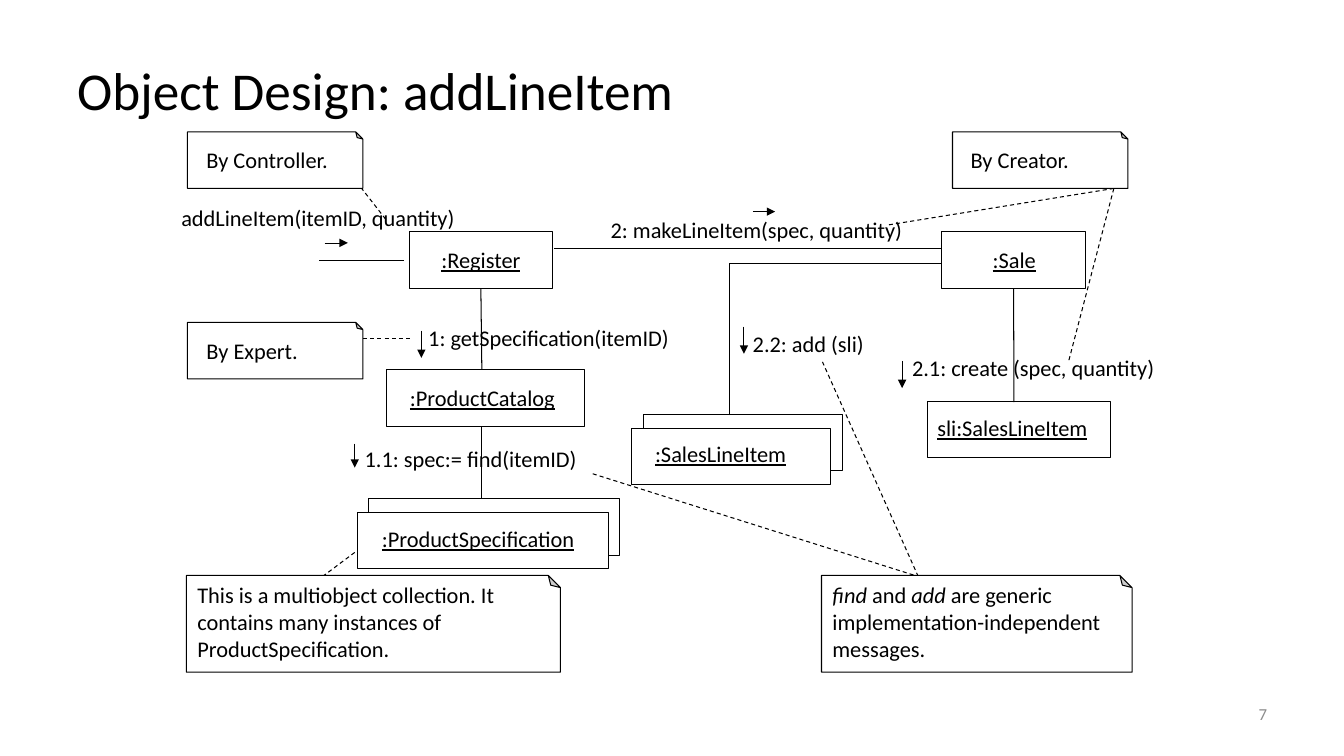
"""Build the addLineItem object design slide."""
from lxml.etree import SubElement
from pptx import Presentation
from pptx.dml.color import RGBColor
from pptx.enum.dml import MSO_LINE
from pptx.enum.shapes import MSO_CONNECTOR as LINK, MSO_SHAPE as SHAPE
from pptx.enum.text import MSO_ANCHOR as ANCHOR, MSO_AUTO_SIZE as AUTO, PP_ALIGN as ALIGN
from pptx.oxml.ns import qn
from pptx.util import Pt

BLACK = RGBColor(0x00, 0x00, 0x00)
WHITE = RGBColor(0xFF, 0xFF, 0xFF)
GRAY = RGBColor(0x8C, 0x8C, 0x8C)
FONT = "Calibri"
TEXT_SIZE = 16
LABEL_HEIGHT = 26.6
BOX_HEIGHT = 40.3

TITLE = "Object Design: addLineItem"
PAGE_NUMBER = "7"

OBJECT_BOXES = {
    "register": (292.3, 165.6, 102.4, None),
    "sale": (672.5, 165.6, 103, None),
    "new item": (662.4, 286.6, 131, None),
    "catalog": (275.8, 264.2, 141.8, None),
    "specifications behind": (263.5, 356.2, 179.3, None),
    "specifications": (255.6, 365.8, 179.3, WHITE),
    "items behind": (459.4, 296.1, 142.2, None),
    "items": (451.4, 306, 141.8, WHITE),
}
OBJECT_NAMES = [
    (":Register", 308.2, 172.1, 72),
    (":Sale", 702, 172.1, 45.4),
    ("sli:SalesLineItem", 662.4, 292.3, 123.1),
    (":ProductCatalog", 285.8, 270.7, 119.5),
    (":ProductSpecification", 265.7, 371.5, 154.1),
    (":SalesLineItem", 460.8, 311.2, 109.4),
]
MESSAGES = [
    ("addLineItem(itemID, quantity)", 122.4, 142.6, 212.4),
    ("2: makeLineItem(spec, quantity)", 429.1, 151.2, 225.4),
    ("2.1: create (spec, quantity)", 644.4, 249.1, 190.1),
    ("2.2: add (sli)", 530.6, 232.6, 95),
    ("1: getSpecification(itemID)", 298.8, 228.2, 188.6),
    ("1.1: spec:= find(itemID)", 253.4, 314.6, 167.8),
]
NOTES = [
    (133.9, 94.3, 125.3, BOX_HEIGHT),
    (680.4, 94.3, 125.3, BOX_HEIGHT),
    (133.9, 230.4, 125.3, BOX_HEIGHT),
    (133.2, 411.1, 267.1, 69.1),
    (586.8, 411.1, 221.8, 69.1),
]
PLAIN, ITALIC = False, True
NOTE_TEXTS = [
    ([[("By Controller.", PLAIN)]], 140.4, 100.8, 103, LABEL_HEIGHT),
    ([[("By Creator.", PLAIN)]], 686.2, 100.8, 85.7, LABEL_HEIGHT),
    ([[("By Expert.", PLAIN)]], 140.4, 237.6, 80.6, LABEL_HEIGHT),
    ([[("This is a multiobject collection. It", PLAIN)],
      [("contains many instances of", PLAIN)],
      [("ProductSpecification.", PLAIN)]], 133.9, 411.8, 229, 65.5),
    ([[("find", ITALIC), (" and ", PLAIN), ("add", ITALIC), (" are generic", PLAIN)],
      [("implementation-independent", PLAIN)],
      [("messages.", PLAIN)]], 587.5, 411.8, 211.7, 65.5),
]
ASSOCIATIONS = [
    (228.2, 185.8, 288.7, 185.8, None),
    (396, 177.8, 672.5, 177.8, None),
    (521.3, 296.6, 521.3, 187.9, None),
    (521.3, 187.9, 672.5, 187.9, None),
    (344.2, 304.6, 344.2, 356.4, None),
    (343.5, 205.9, 344.2, 264.2, "register"),
    (724, 205.9, 724.3, 287.3, "sale"),
]
ARROWS = [
    (231.8, 173.5, 248.4, 173.5, 0.25),
    (537.8, 151.2, 553.7, 151.2, 0.25),
    (644.4, 257.8, 644.4, 277.2, 0.75),
    (531.4, 233.3, 531.4, 252.7, 0.75),
    (301, 236.2, 301, 255.6, 0.75),
    (253.4, 316.8, 253.4, 334.1, 0.75),
]
NOTE_LINKS = [
    (257.8, 133.9, 275.8, 157),
    (795.6, 134.6, 635, 160.6),
    (795.6, 134.6, 763.2, 258.5),
    (259.2, 241.9, 293, 241.9),
    (230.4, 411.8, 253.4, 394.6),
    (655.9, 411.8, 587.5, 258.5),
    (423.4, 338.4, 655.9, 411.8),
]


def add_text(page, paragraphs, left, top, width, height, size=TEXT_SIZE, color=BLACK, underline=False):
    box = page.shapes.add_textbox(Pt(left), Pt(top), Pt(width), Pt(height))
    frame = box.text_frame
    frame.word_wrap = False
    frame.auto_size = AUTO.NONE
    for index, spans in enumerate(paragraphs):
        para = frame.paragraphs[0] if index == 0 else frame.add_paragraph()
        for text, italic in spans:
            span = para.add_run()
            span.text = text
            span.font.name = FONT
            span.font.size = Pt(size)
            span.font.color.rgb = color
            span.font.italic = italic
            span.font.underline = underline
    return frame


def add_outline(page, kind, left, top, width, height, fill):
    shape = page.shapes.add_shape(kind, Pt(left), Pt(top), Pt(width), Pt(height))
    shape.shadow.inherit = False
    if fill is None:
        shape.fill.background()
    else:
        shape.fill.solid()
        shape.fill.fore_color.rgb = fill
    shape.line.color.rgb = BLACK
    shape.line.width = Pt(0.75)
    return shape


def add_line(page, start_x, start_y, end_x, end_y, weight=0.75):
    line = page.shapes.add_connector(LINK.STRAIGHT, Pt(start_x), Pt(start_y), Pt(end_x), Pt(end_y))
    line.line.color.rgb = BLACK
    line.line.width = Pt(weight)
    SubElement(line._element.spPr, qn("a:effectLst"))
    return line


def add_heading(page):
    frame = add_text(page, [[(TITLE, PLAIN)]], 48, 21.6, 864, 90, size=38)
    frame.word_wrap = True
    frame.vertical_anchor = ANCHOR.MIDDLE
    frame.paragraphs[0].line_spacing = 0.9
    frame = add_text(page, [[(PAGE_NUMBER, PLAIN)]], 688.3, 491.8, 223.9, 36, size=12, color=GRAY)
    frame.word_wrap = True
    frame.vertical_anchor = ANCHOR.MIDDLE
    frame.paragraphs[0].alignment = ALIGN.RIGHT


def add_objects(page):
    boxes = {}
    for name, (left, top, width, fill) in OBJECT_BOXES.items():
        boxes[name] = add_outline(page, SHAPE.RECTANGLE, left, top, width, BOX_HEIGHT, fill)
    for text, left, top, width in OBJECT_NAMES:
        add_text(page, [[(text, PLAIN)]], left, top, width, LABEL_HEIGHT, underline=True)
    return boxes


def add_messages(page, boxes):
    for *ends, owner in ASSOCIATIONS:
        line = add_line(page, *ends)
        if owner:
            line.begin_connect(boxes[owner], 2)
    for arrow in ARROWS:
        line = add_line(page, *arrow)
        SubElement(line.line._get_or_add_ln(), qn("a:tailEnd"), type="triangle")
    for text, left, top, width in MESSAGES:
        add_text(page, [[(text, PLAIN)]], left, top, width, LABEL_HEIGHT)


def add_notes(page):
    for ends in NOTE_LINKS:
        add_line(page, *ends).line.dash_style = MSO_LINE.DASH
    for place in NOTES:
        note = add_outline(page, SHAPE.FOLDED_CORNER, *place, WHITE)
        properties = note._element.spPr
        properties.find(qn("a:xfrm")).set("flipV", "1")
        fold = properties.find(qn("a:prstGeom")).find(qn("a:avLst"))
        SubElement(fold, qn("a:gd"), name="adj", fmla="val 12500")
    for note_text in NOTE_TEXTS:
        add_text(page, *note_text)


def main():
    deck = Presentation()
    deck.slide_width, deck.slide_height = Pt(960), Pt(540)
    page = deck.slides.add_slide(deck.slide_layouts[6])
    add_heading(page)
    boxes = add_objects(page)
    add_messages(page, boxes)
    add_notes(page)
    deck.save("out.pptx")


if __name__ == "__main__":
    main()
